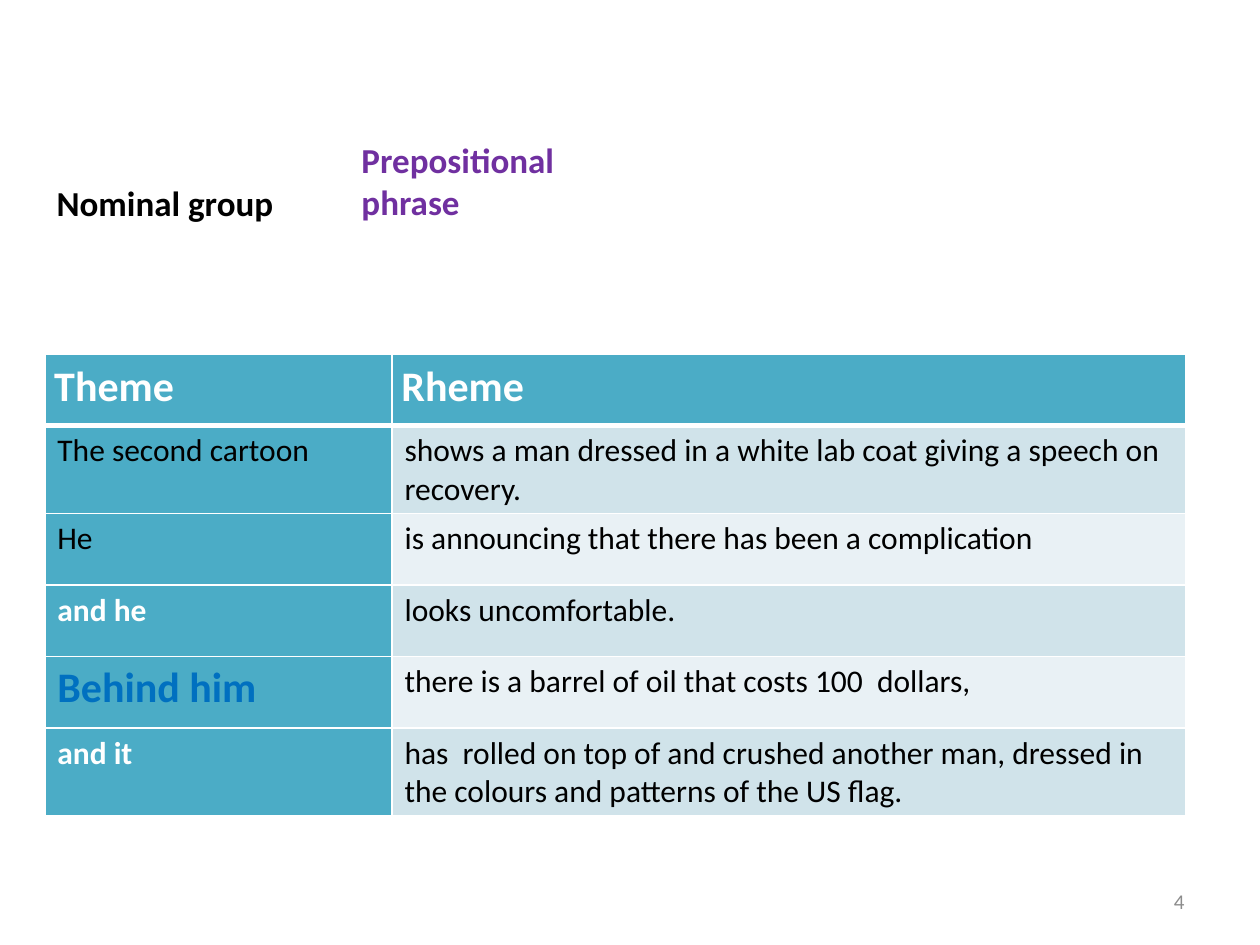
from lxml.etree import SubElement
from pptx import Presentation
from pptx.dml.color import RGBColor as Color
from pptx.enum.text import MSO_ANCHOR as Anchor, PP_ALIGN as Align
from pptx.oxml.ns import qn
from pptx.util import Pt

COLORS = {
    "black": "000000",
    "white": "FFFFFF",
    "purple": "7030A0",
    "blue": "0070C0",
    "grey": "8C8C8C",
    "teal": "4BACC6",
    "dark band": "D0E3EA",
    "light band": "E9F1F5",
}


def write(frame, text, size=18, color="black", bold=False, align=Align.LEFT, spacing=None):
    frame.word_wrap = True
    para = frame.paragraphs[0]
    para.alignment = align
    para.line_spacing = spacing
    span = para.add_run()
    span.text = text
    span.font.name = "Calibri"
    span.font.size = Pt(size)
    span.font.bold = bold
    span.font.color.rgb = Color.from_string(COLORS[color])


def style_cell(cell, fill, top, bottom):
    """Give the cell white borders and a solid fill; top and bottom are line widths."""
    properties = cell._tc.get_or_add_tcPr()
    for side, width in (("L", 1), ("R", 1), ("T", top), ("B", bottom)):
        line = SubElement(properties, qn(f"a:ln{side}"), w=str(Pt(width)))
        solid = SubElement(line, qn("a:solidFill"))
        SubElement(solid, qn("a:srgbClr"), val=COLORS["white"])
    cell.fill.solid()
    cell.fill.fore_color.rgb = Color.from_string(COLORS[fill])


deck = Presentation()
deck.slide_width, deck.slide_height = Pt(720), Pt(540)
page = deck.slides.add_slide(deck.slide_layouts[6])

# Labels and page number
plain = {"size": 20, "bold": True}
number = {"size": 12, "color": "grey", "align": Align.RIGHT}
labels = [
    ("Nominal group", (25.2, 100, 147.6, 31.5), Anchor.TOP, plain),
    ("Prepositional phrase", (199.5, 75.6, 153.4, 55.7), Anchor.TOP, plain | {"color": "purple"}),
    ("4", (516, 500.5, 168, 28.75), Anchor.MIDDLE, number),
]
for text, place, anchor, style in labels:
    box = page.shapes.add_textbox(*map(Pt, place))
    box.text_frame.vertical_anchor = anchor
    write(box.text_frame, text, **style)

# Theme and rheme table
white_bold = {"color": "white", "bold": True}
header = white_bold | {"size": 24, "align": Align.JUSTIFY, "spacing": 1.15}
rows = [
    ("Theme", "Rheme", header),
    ("The second cartoon", "shows a man dressed in a white lab coat giving a speech on recovery.", {}),
    ("He", "is announcing that there has been a complication", {}),
    ("and he", "looks uncomfortable.", white_bold),
    ("Behind him", "there is a barrel of oil that costs 100  dollars,",
     {"size": 24, "color": "blue", "bold": True}),
    ("and it", "has  rolled on top of and crushed another man, dressed in the colours "
     "and patterns of the US flag.", white_bold),
]
row_height = 40.8
table = page.shapes.add_table(
    len(rows), 2, Pt(25.6), Pt(202.3), Pt(652), Pt(row_height * len(rows))).table
table.horz_banding = False
table.columns[0].width, table.columns[1].width = Pt(198.4), Pt(453.6)

for index, (theme, rheme, theme_style) in enumerate(rows):
    is_header = index == 0
    band = "teal" if is_header else "dark band" if index % 2 else "light band"
    rheme_style = header if is_header else {}
    columns = [(theme, theme_style, "teal"), (rheme, rheme_style, band)]
    for column, (text, style, fill) in enumerate(columns):
        cell = table.cell(index, column)
        if is_header:
            cell.margin_left = cell.margin_right = Pt(5.4)
            cell.margin_top = cell.margin_bottom = 0
        style_cell(cell, fill, top=3 if index == 1 else 1, bottom=3 if is_header else 1)
        write(cell.text_frame, text, **style)

deck.save("out.pptx")
